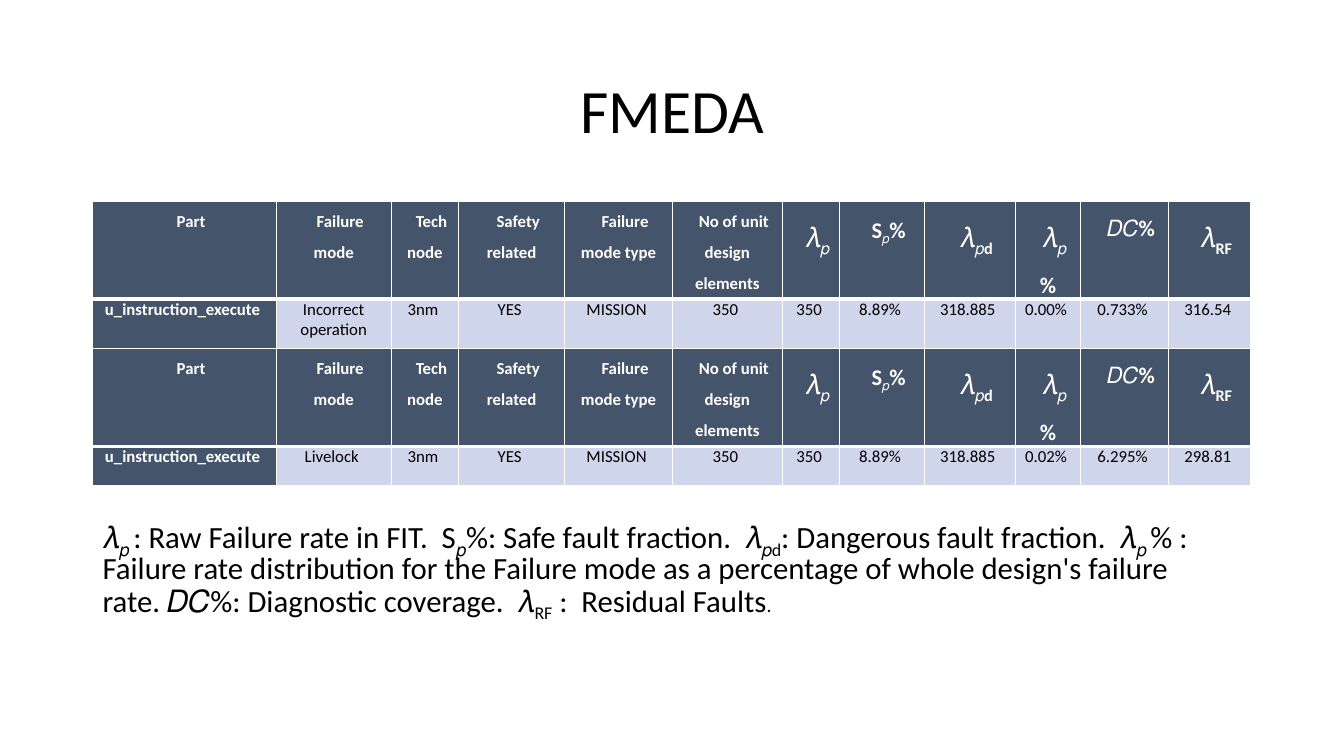
from dataclasses import dataclass

from lxml.etree import SubElement
from pptx import Presentation
from pptx.dml.color import RGBColor
from pptx.enum.text import MSO_ANCHOR, PP_ALIGN
from pptx.oxml.ns import qn
from pptx.util import Inches, Pt


@dataclass(frozen=True)
class Theme:
    font: str = "Calibri"
    ink: str = "000000"
    white: str = "FFFFFF"
    dark: str = "44546A"
    pale: str = "CFD5EA"
    title: int = 44
    note: int = 22
    stop: int = 14
    symbol: int = 20
    ratio: int = 16
    cell: int = 12


THEME = Theme()
LEFT, WIDTH = 0.92, 11.5
COLS = [1.82, 1.14, 0.67, 1.05, 1.07, 1.09, 0.57, 0.84, 0.9, 0.65, 0.87, 0.82]

# Between bars, every second part is a subscript.
HEADS = [(name, THEME.cell) for name in (
    "Part", "Failure mode", "Tech node", "Safety related",
    "Failure mode type", "No of unit design elements")] + [
    ("𝜆|𝑝", THEME.symbol),
    ("S|𝑝|%", THEME.ratio),
    ("𝜆|𝑝d", THEME.symbol),
    ("𝜆|𝑝", THEME.symbol, " %", THEME.ratio),
    ("𝐷𝐶%", THEME.ratio),
    ("𝜆|RF", THEME.symbol),
]
PART = "u_instruction_execute "
SHARED = ["3nm ", "YES ", "MISSION ", "350 ", "350 ", "8.89% ", "318.885 "]
NOTE = (
    "𝜆|𝑝 |: Raw Failure rate in FIT.  S|𝑝|%: Safe fault fraction.  "
    "𝜆|𝑝d|: Dangerous fault fraction.  𝜆|𝑝 |% : Failure rate distribution "
    "for the Failure mode as a percentage of whole design's failure rate. "
    "𝐷𝐶%: Diagnostic coverage.  𝜆|RF| :  Residual Faults"
)


def write(par, text, size, tail="", tail_size=None, color=THEME.ink,
          bold=False, align=PP_ALIGN.LEFT, spacing=1.0):
    """Fill a paragraph; bars in text switch subscript on and off."""
    par.alignment = align
    par.line_spacing = spacing
    font = par.font
    font.name, font.size, font.bold = THEME.font, Pt(size), bold
    font.color.rgb = RGBColor.from_string(color)
    for i, part in enumerate(text.split("|")):
        run = par.add_run()
        run.text = part
        if i % 2:
            run._r.get_or_add_rPr().set("baseline", "-25000")
    if tail:
        run = par.add_run()
        run.text = tail
        run.font.size = Pt(tail_size)


def add_text(slide, top, height, *text, anchor=MSO_ANCHOR.TOP, **style):
    box = slide.shapes.add_textbox(
        Inches(LEFT), Inches(top), Inches(WIDTH), Inches(height))
    frame = box.text_frame
    frame.word_wrap = True
    frame.vertical_anchor = anchor
    write(frame.paragraphs[0], *text, **style)


def style_cell(cell, fill, top, bottom):
    """Set margins, white borders (top and bottom in points) and fill."""
    cell.margin_left = cell.margin_right = Inches(0.07)
    cell.margin_top = cell.margin_bottom = 0
    props = cell._tc.get_or_add_tcPr()
    for side, width in zip("LRTB", (1, 1, top, bottom)):
        line = SubElement(props, qn(f"a:ln{side}"), w=str(Pt(width)))
        paint = SubElement(line, qn("a:solidFill"))
        SubElement(paint, qn("a:srgbClr"), val=THEME.white)
    cell.fill.solid()
    cell.fill.fore_color.rgb = RGBColor.from_string(fill)


def add_fmeda(slide, top, heights, values):
    frame = slide.shapes.add_table(
        2, len(COLS), Inches(LEFT), Inches(top),
        Inches(WIDTH), Inches(sum(heights)))
    table = frame.table
    table.first_row = table.horz_banding = False
    for col, width in zip(table.columns, COLS):
        col.width = Inches(width)
    for row, height in zip(table.rows, heights):
        row.height = Inches(height)
    for i, (head, value) in enumerate(zip(HEADS, values)):
        cell = table.cell(0, i)
        style_cell(cell, THEME.dark, 1, 3)
        par = cell.text_frame.paragraphs[0]
        par._p.get_or_add_pPr().set("indent", str(Inches(0.13)))
        write(par, *head, color=THEME.white, bold=True,
              align=PP_ALIGN.CENTER, spacing=1.5)
        cell = table.cell(1, i)
        first = i == 0
        style_cell(cell, THEME.dark if first else THEME.pale, 3, 1)
        write(cell.text_frame.paragraphs[0], value, THEME.cell,
              color=THEME.white if first else THEME.ink,
              bold=first, align=PP_ALIGN.CENTER)


def main():
    deck = Presentation()
    deck.slide_width, deck.slide_height = Inches(13.33), Inches(7.5)
    slide = deck.slides.add_slide(deck.slide_layouts[6])
    add_text(slide, 0.4, 1.45, "FMEDA", THEME.title, spacing=0.9,
             align=PP_ALIGN.CENTER, anchor=MSO_ANCHOR.MIDDLE)
    add_text(slide, 5.13, 1.15, NOTE, THEME.note, ".", THEME.stop,
             spacing=0.8)
    add_fmeda(slide, 2, (0.92, 0.54),
              [PART, "Incorrect operation", *SHARED,
               "0.00% ", "0.733% ", "316.54 "])
    add_fmeda(slide, 3.46, (0.74, 0.39),
              [PART, "Livelock ", *SHARED, "0.02% ", "6.295% ", "298.81 "])
    deck.save("out.pptx")


if __name__ == "__main__":
    main()
